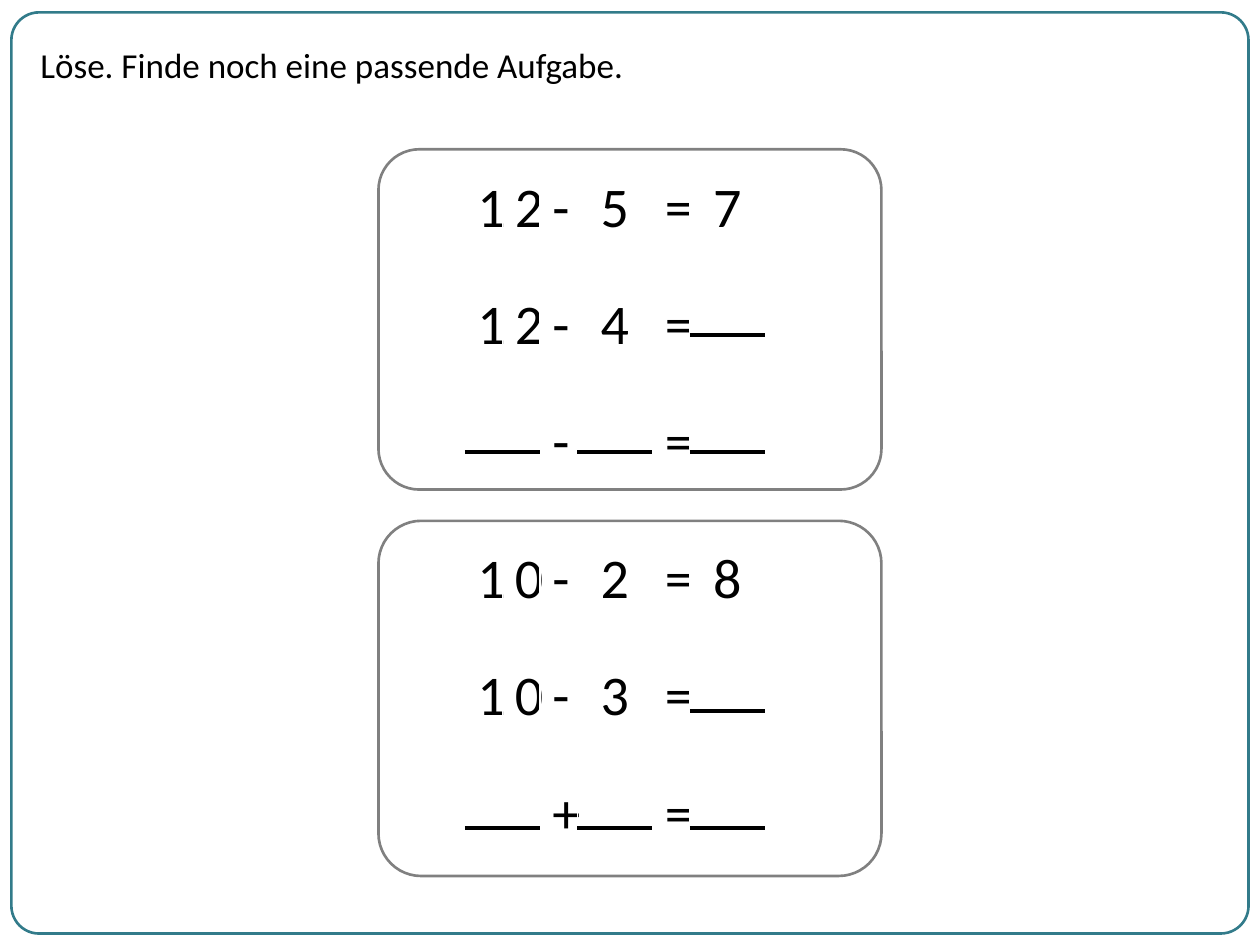
from dataclasses import dataclass

from lxml.etree import SubElement
from pptx import Presentation
from pptx.dml.color import RGBColor
from pptx.enum.shapes import MSO_CONNECTOR, MSO_SHAPE
from pptx.enum.text import MSO_ANCHOR, PP_ALIGN
from pptx.oxml.ns import qn
from pptx.slide import Slide
from pptx.text.text import TextFrame
from pptx.util import Cm, Pt

BLACK = RGBColor(0x00, 0x00, 0x00)
GREY = RGBColor(0x80, 0x80, 0x80)
TEAL = RGBColor(0x32, 0x7B, 0x8A)

EQUATION_LEFT = Cm(9.37)
EQUATION_WIDTH = Cm(6.05)
EQUATION_HEIGHT = Cm(1.6)
EQUATION_STEP = Cm(2.36)
DIGIT_WIDTH = EQUATION_WIDTH // 8
BLANK = ""


@dataclass
class Equation:
    first: str
    operator: str
    second: str
    result: str


@dataclass
class Frame:
    left: int
    top: int
    width: int
    height: int
    rounding: float
    color: RGBColor


@dataclass
class Exercise:
    frame: Frame
    equations_top: int
    blank_drop: int
    equations: list[Equation]


PAGE_FRAME = Frame(Cm(0.23), Cm(0.25), Cm(24.94), Cm(18.57), 0.03, TEAL)
EXERCISES = [
    Exercise(
        Frame(Cm(7.63), Cm(3.01), Cm(10.14), Cm(6.86), 0.12, GREY),
        Cm(3.38),
        Cm(1.01),
        [
            Equation("12", "-", "5", "7"),
            Equation("12", "-", "4", BLANK),
            Equation(BLANK, "-", BLANK, BLANK),
        ],
    ),
    Exercise(
        Frame(Cm(7.63), Cm(10.5), Cm(10.14), Cm(7.16), 0.12, GREY),
        Cm(10.87),
        Cm(1.1),
        [
            Equation("10", "-", "2", "8"),
            Equation("10", "-", "3", BLANK),
            Equation(BLANK, "+", BLANK, BLANK),
        ],
    ),
]


def write_text(text_frame: TextFrame, text: str, *, size: int,
               align: PP_ALIGN = PP_ALIGN.LEFT) -> None:
    paragraph = text_frame.paragraphs[0]
    paragraph.alignment = align
    run = paragraph.add_run()
    run.text = text
    run.font.name = "Calibri"
    run.font.size = Pt(size)
    run.font.bold = False
    run.font.color.rgb = BLACK


def draw_frame(slide: Slide, frame: Frame) -> None:
    outline = slide.shapes.add_shape(MSO_SHAPE.ROUNDED_RECTANGLE, frame.left,
                                     frame.top, frame.width, frame.height)
    outline.adjustments[0] = frame.rounding
    outline.shadow.inherit = False
    outline.fill.background()
    outline.line.color.rgb = frame.color
    outline.line.width = Pt(1.5)


def draw_blank(slide: Slide, left: int, y: int) -> None:
    """Draw the line on which a missing number is written."""
    rule = slide.shapes.add_connector(MSO_CONNECTOR.STRAIGHT, left, y,
                                      left + 2 * DIGIT_WIDTH, y)
    rule.line.color.rgb = BLACK
    rule.line.width = Pt(2.25)
    SubElement(rule._element.spPr, qn("a:effectLst"))


def equation_cells(equation: Equation) -> list[tuple[str, int]]:
    """Return each cell's text and its width in digits."""
    empty = [(BLANK, 1), (BLANK, 1)]
    first = [(digit, 1) for digit in equation.first] or empty
    second = [(equation.second, 2)] if equation.second else empty
    result = [(equation.result, 2)] if equation.result else empty
    return [*first, (equation.operator, 1), *second, ("=", 1), *result]


def draw_equation(slide: Slide, equation: Equation, top: int,
                  blank_drop: int) -> None:
    cells = equation_cells(equation)
    table = slide.shapes.add_table(1, len(cells), EQUATION_LEFT, top,
                                   EQUATION_WIDTH, EQUATION_HEIGHT).table
    table.first_row = False
    table.horz_banding = False
    for column, (text, digits) in enumerate(cells):
        table.columns[column].width = digits * DIGIT_WIDTH
        cell = table.cell(0, column)
        cell.fill.background()
        cell.vertical_anchor = MSO_ANCHOR.MIDDLE
        if text:
            write_text(cell.text_frame, text, size=32, align=PP_ALIGN.CENTER)

    numbers = (equation.first, equation.second, equation.result)
    for position, number in enumerate(numbers):
        if number == BLANK:
            draw_blank(slide, EQUATION_LEFT + 3 * position * DIGIT_WIDTH,
                       top + blank_drop)


def draw_exercise(slide: Slide, exercise: Exercise) -> None:
    draw_frame(slide, exercise.frame)
    for row, equation in enumerate(exercise.equations):
        draw_equation(slide, equation,
                      exercise.equations_top + row * EQUATION_STEP,
                      exercise.blank_drop)


def draw_title(slide: Slide, text: str) -> None:
    title = slide.shapes.title
    title.left, title.top = Cm(0.56), Cm(0.74)
    title.width, title.height = Cm(21.44), Cm(1.12)
    title.text_frame.word_wrap = True
    title.text_frame.vertical_anchor = MSO_ANCHOR.TOP
    write_text(title.text_frame, text, size=20)


def main() -> None:
    presentation = Presentation()
    presentation.slide_width = Cm(25.4)
    presentation.slide_height = Cm(19.05)
    title_only = presentation.slide_layouts[5]
    slide = presentation.slides.add_slide(title_only)

    draw_title(slide, "Löse. Finde noch eine passende Aufgabe.")
    draw_frame(slide, PAGE_FRAME)
    for exercise in EXERCISES:
        draw_exercise(slide, exercise)
    presentation.save("out.pptx")


if __name__ == "__main__":
    main()
